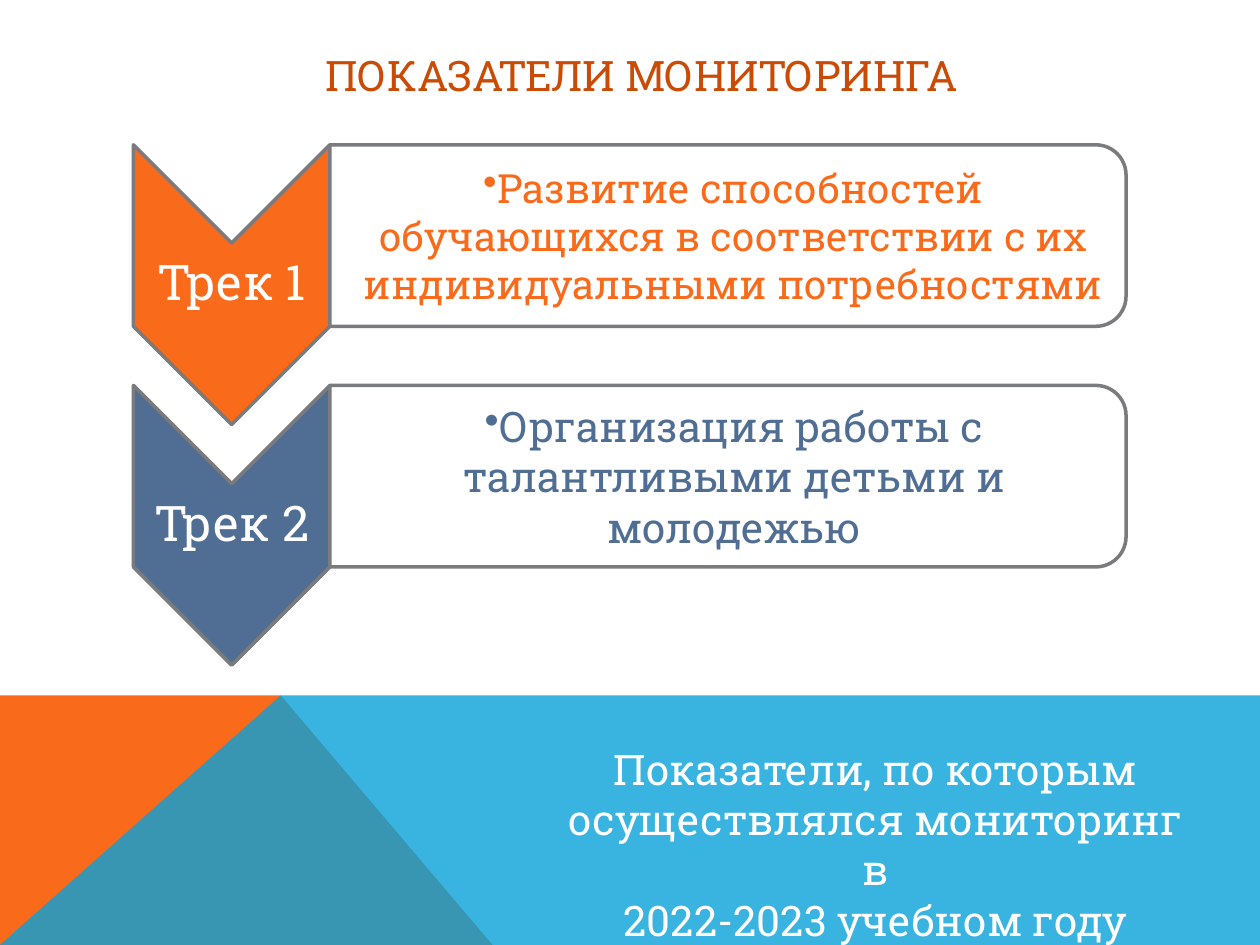
from dataclasses import dataclass

from lxml.etree import SubElement
from pptx import Presentation
from pptx.dml.color import RGBColor
from pptx.enum.shapes import MSO_SHAPE as Kind
from pptx.enum.text import MSO_ANCHOR as Anchor, PP_ALIGN as Align
from pptx.oxml.ns import qn
from pptx.util import Cm, Pt

FONT = "Roboto Slab"
WHITE, ORANGE, GREY = "FFFFFF", "F96A1B", "797B7E"
WIDE, HIGH = 25.4, 19.05
LEFT, TOP, PITCH = 2.69, 2.92, 4.85
ARROW_W, ARROW_H = 3.96, 5.64
CARD_W, CARD_H = 16.05, 3.66
BAND, PEAK = 14.02, 5.66


@dataclass
class Box:
    x: float
    y: float
    w: float
    h: float


@dataclass
class Track:
    name: str
    goal: str
    color: str
    size: int
    inset: float


TRACKS = [
    Track("Трек 1", "Развитие способностей обучающихся в соответствии с их "
          "индивидуальными потребностями", ORANGE, 23, 0.46),
    Track("Трек 2", "Организация работы с талантливыми детьми и молодежью",
          "506E94", 24, 0.48),
]


def rgb(color: str) -> RGBColor:
    return RGBColor.from_string(color)


def paint(shape, color: str, alpha: int = 100, edge: str = "") -> None:
    shape.shadow.inherit = False
    shape.fill.solid()
    shape.fill.fore_color.rgb = rgb(color)
    if alpha < 100:
        tone = next(shape._element.spPr.iter(qn("a:srgbClr")))
        SubElement(tone, qn("a:alpha"), val=str(alpha * 1000))
    if edge:
        shape.line.color.rgb = rgb(edge)
        shape.line.width = Pt(2)
    else:
        shape.line.fill.background()


def add_facet(slide, points: list, color: str, alpha: int = 100) -> None:
    spots = [(Cm(x), Cm(y)) for x, y in points]
    pen = slide.shapes.build_freeform(*spots[0])
    pen.add_line_segments(spots[1:], close=True)
    paint(pen.convert_to_shape(), color, alpha)


def add_turned(slide, kind: Kind, box: Box, color: str, alpha: int = 100) -> None:
    """Draw a shape turned by 90 degrees so that it fills the given box."""
    x, y = box.x + (box.w - box.h) / 2, box.y + (box.h - box.w) / 2
    shape = slide.shapes.add_shape(kind, Cm(x), Cm(y), Cm(box.h), Cm(box.w))
    shape.rotation = 90
    paint(shape, color, alpha, GREY)


def add_text(slide, box: Box, lines: list[str], size: int, color: str,
             anchor: Anchor = Anchor.MIDDLE, left: float = 0.05,
             pad: float = 0.05, space: float | None = None, bullet: str = "") -> None:
    frame = slide.shapes.add_textbox(Cm(box.x), Cm(box.y), Cm(box.w), Cm(box.h)).text_frame
    frame.word_wrap = True
    frame.vertical_anchor = anchor
    frame.margin_left = Cm(left)
    frame.margin_top = frame.margin_right = frame.margin_bottom = Cm(pad)
    frame.text = "\n".join(lines)
    for para in frame.paragraphs:
        para.alignment = Align.CENTER
        para.line_spacing = space
        para.font.name = FONT
        para.font.size = Pt(size)
        para.font.color.rgb = rgb(color)
        if bullet:
            props = para._p.get_or_add_pPr()
            props.set("marL", "0")
            props.set("indent", "0")
            mark = props.makeelement(qn("a:buChar"), {"char": bullet})
            props.find(qn("a:defRPr")).addprevious(mark)


def add_track(slide, track: Track, top: float) -> None:
    add_turned(slide, Kind.CHEVRON, Box(LEFT, top, ARROW_W, ARROW_H), track.color)
    add_text(slide, Box(LEFT, top + ARROW_W / 2, ARROW_W, ARROW_H - ARROW_W),
             [track.name], 28, WHITE, space=0.9)
    card = Box(LEFT + ARROW_W, top, CARD_W, CARD_H)
    add_turned(slide, Kind.ROUND_2_SAME_RECTANGLE, card, WHITE, 90)
    add_text(slide, Box(card.x, top + 0.18, CARD_W - 0.18, CARD_H - 0.36),
             [track.goal], track.size, track.color, left=track.inset, bullet="•")


def main() -> None:
    deck = Presentation()
    deck.slide_width, deck.slide_height = Cm(WIDE), Cm(HIGH)
    slide = deck.slides.add_slide(deck.slide_layouts[6])
    add_facet(slide, [(0, HIGH), (0, BAND), (PEAK, BAND), (9.93, HIGH)], ORANGE)
    add_facet(slide, [(0, HIGH), (PEAK, BAND), (WIDE, BAND), (WIDE, HIGH)], "08A1D9", 80)
    add_text(slide, Box(2.49, 0.74, 20.88, 1.52), ["ПОКАЗАТЕЛИ МОНИТОРИНГА"], 24, "CA4B05")
    for i, track in enumerate(TRACKS):
        add_track(slide, track, TOP + i * PITCH)
    add_text(slide, Box(10.9, 14.73, 13.49, 3.33),
             ["Показатели, по которым осуществлялся мониторинг в", "2022-2023 учебном году"],
             24, WHITE, Anchor.TOP, left=0.25, pad=0.25)
    deck.save("out.pptx")


if __name__ == "__main__":
    main()
